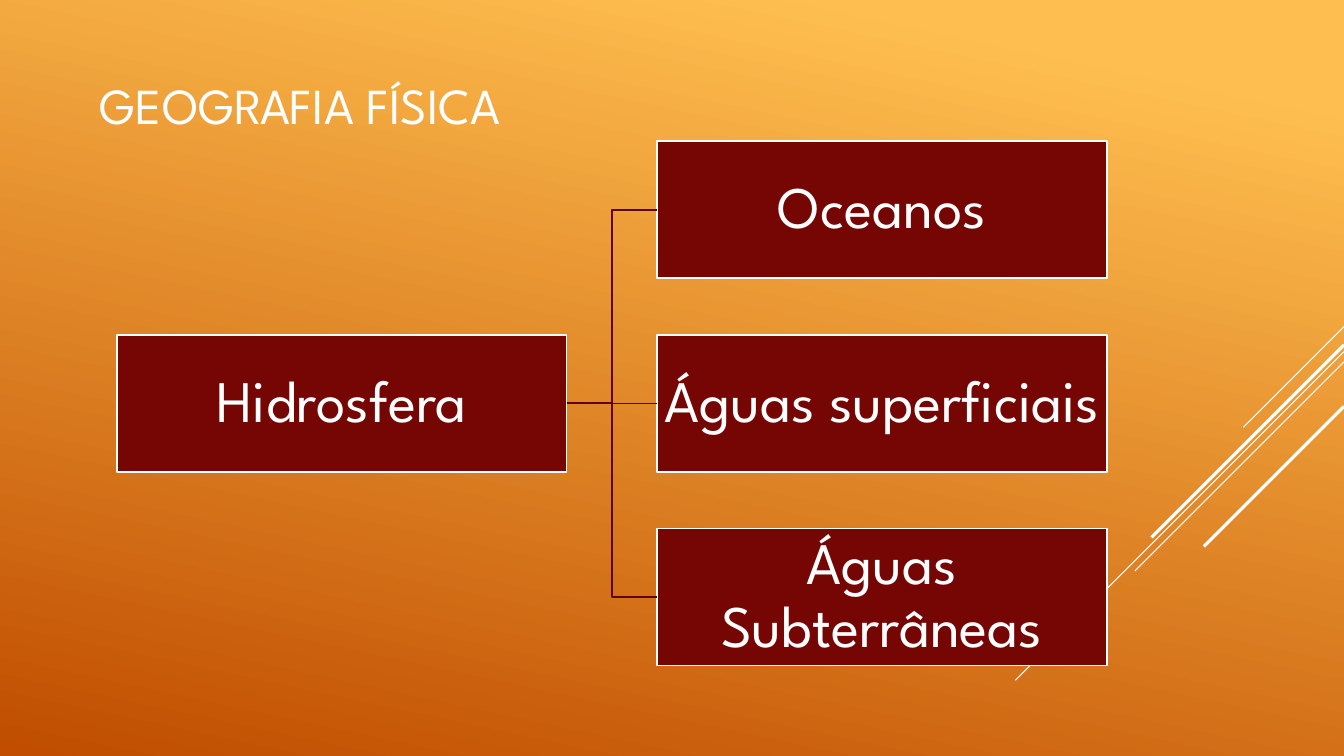
from lxml.etree import SubElement
from pptx import Presentation
from pptx.dml.color import RGBColor
from pptx.enum.shapes import MSO_CONNECTOR, MSO_SHAPE
from pptx.enum.text import MSO_ANCHOR, PP_ALIGN
from pptx.oxml.ns import qn
from pptx.util import Cm, Pt

WIDTH, HEIGHT = 33.87, 19.05
SITE = {"left": 1, "right": 3}


def color(value):
    return RGBColor.from_string(value)


def apply(obj, values):
    for name, value in values.items():
        setattr(obj, name, value)


class Deck:
    font = "League Spartan"
    white, box_fill, link = "FFFFFF", "760603", "5E0502"
    background = [("FFBF50", 0.1), ("C04D00", 1.0)]

    def __init__(self):
        self.prs = Presentation()
        apply(self.prs, {"slide_width": Cm(WIDTH), "slide_height": Cm(HEIGHT)})
        self.s = self.prs.slides.add_slide(self.prs.slide_layouts[5])

    def paint_background(self):
        fill = self.s.background.fill
        fill.gradient()
        fill.gradient_angle = 258
        for stop, (tone, position) in zip(fill.gradient_stops, self.background):
            stop.color.rgb = color(tone)
            stop.position = position

    def set_text(self, sp, text, size, frame, para):
        tf = sp.text_frame
        apply(tf, {"word_wrap": True, "vertical_anchor": MSO_ANCHOR.MIDDLE, **frame})
        p = tf.paragraphs[0]
        apply(p, {"line_spacing": 0.9, **para})
        r = p.add_run()
        r.text = text
        apply(r.font, {"name": self.font, "size": Pt(size)})
        r.font.color.rgb = color(self.white)

    def title(self, text, x, y, w, h):
        sp = self.s.shapes.title
        apply(sp, {"left": Cm(x), "top": Cm(y), "width": Cm(w), "height": Cm(h)})
        self.set_text(sp, text, 36, {}, {"alignment": PP_ALIGN.LEFT})

    def box(self, text, x, y, w, h):
        sp = self.s.shapes.add_shape(MSO_SHAPE.RECTANGLE, Cm(x), Cm(y), Cm(w), Cm(h))
        sp.shadow.inherit = False
        sp.fill.solid()
        sp.fill.fore_color.rgb = color(self.box_fill)
        sp.line.color.rgb = color(self.white)
        sp.line.width = Pt(1.25)
        margins = {f"margin_{side}": Cm(0.08) for side in ("left", "right", "top", "bottom")}
        self.set_text(sp, text, 42, margins, {"alignment": PP_ALIGN.CENTER})
        return sp

    def connector(self, kind, start, end, tone, width):
        cx = self.s.shapes.add_connector(kind, *start, *end)
        cx.line.color.rgb = color(tone)
        cx.line.width = Pt(width)
        SubElement(cx._element.spPr, qn("a:effectLst"))
        return cx

    def diagonal(self, y, run, width):
        self.connector(MSO_CONNECTOR.STRAIGHT, (Cm(WIDTH), Cm(y)),
                       (Cm(WIDTH - run), Cm(y + run)), self.white, width)

    def branch(self, parent, child):
        start = parent.left + parent.width, parent.top + parent.height // 2
        end = child.left, child.top + child.height // 2
        level = parent.top == child.top
        kind = MSO_CONNECTOR.STRAIGHT if level else MSO_CONNECTOR.ELBOW
        cx = self.connector(kind, start, end, self.link, 1.25)
        cx.begin_connect(parent, SITE["right"])
        cx.end_connect(child, SITE["left"])


def main():
    deck = Deck()
    deck.paint_background()

    # Diagonal lines at the right edge: top, horizontal run, width
    for y, run, width in [(8.23, 2.54, 0.75), (8.86, 8.28, 0.75), (9.12, 5.27, 0.75),
                          (8.69, 4.85, 2.25), (10.24, 3.53, 2.25)]:
        deck.diagonal(y, run, width)

    deck.title("GEOGRAFIA FÍSICA", 2.26, 1.09, 23.52, 3.25)

    # Tree: one parent, level with the middle child
    box_w, box_h = 11.33, 3.45
    top, step = 3.56, 4.88
    parent = deck.box("Hidrosfera", 2.95, top + step, box_w, box_h)
    for i, text in enumerate(["Oceanos", "Águas superficiais", "Águas Subterrâneas"]):
        child = deck.box(text, 16.56, top + i * step, box_w, box_h)
        deck.branch(parent, child)

    deck.prs.save("out.pptx")


if __name__ == "__main__":
    main()
